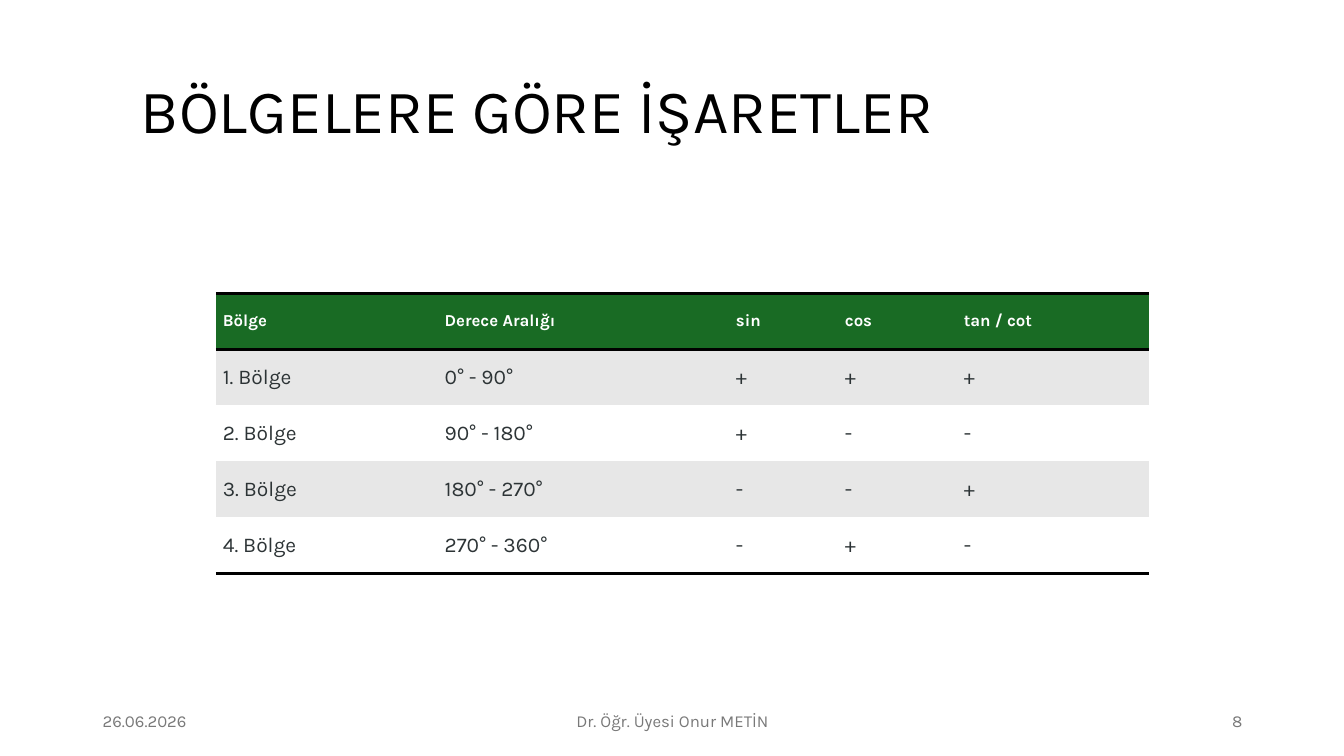
import pptx
import pptx.dml.color
import pptx.enum.text
import pptx.oxml
import pptx.oxml.ns
import pptx.util
from pptx.util import Inches

COLORS = {
    "title": "000000",
    "footer": "797979",
    "header": "196B24",
    "header_text": "FFFFFF",
    "body_text": "2D3436",
    "band": "E7E7E7",
    "plain": "FFFFFF",
    "rule": "000000",
}
FONT = "Karla"
NO_STYLE_NO_GRID = "{2D5ABB26-0587-4C30-8999-92F81FD0307C}"
ALIGN = pptx.enum.text.PP_ALIGN
MIDDLE = pptx.enum.text.MSO_ANCHOR.MIDDLE

SIGN_ROWS = [
    ["Bölge", "Derece Aralığı", "sin", "cos", "tan / cot"],
    ["1. Bölge", "0° - 90°", "+", "+", "+"],
    ["2. Bölge", "90° - 180°", "+", "-", "-"],
    ["3. Bölge", "180° - 270°", "-", "-", "+"],
    ["4. Bölge", "270° - 360°", "-", "+", "-"],
]
COLUMN_WIDTHS = [2.2, 2.89, 1.08, 1.18, 1.91]


def rgb(name):
    return pptx.dml.color.RGBColor.from_string(COLORS[name])


def write_text(frame, text, size, color, bold=False, align=ALIGN.LEFT, line_spacing=None):
    paragraph = frame.paragraphs[0]
    paragraph.alignment = align
    paragraph.line_spacing = line_spacing
    run = paragraph.add_run()
    run.text = text
    run.font.name = FONT
    run.font.size = pptx.util.Pt(size)
    run.font.bold = bold
    run.font.color.rgb = rgb(color)


def add_text_box(slide, box, text, **text_format):
    shape = slide.shapes.add_textbox(*(Inches(length) for length in box))
    frame = shape.text_frame
    frame.word_wrap = True
    frame.vertical_anchor = MIDDLE
    write_text(frame, text, **text_format)


def add_rule(cell, side):
    """Draw a 2 pt line on one side of a cell: lnT for top, lnB for bottom."""
    line = pptx.oxml.parse_xml(
        f'<a:{side} {pptx.oxml.ns.nsdecls("a")} w="{pptx.util.Pt(2)}">'
        f'<a:solidFill><a:srgbClr val="{COLORS["rule"]}"/></a:solidFill></a:{side}>'
    )
    cell._tc.get_or_add_tcPr().append(line)


def fill_cell(cell, text, row_index):
    is_header = row_index == 0
    cell.margin_left = cell.margin_right = Inches(0.07)
    cell.margin_top = cell.margin_bottom = Inches(0.03)
    cell.vertical_anchor = MIDDLE
    if is_header:
        add_rule(cell, "lnT")
    if is_header or row_index == len(SIGN_ROWS) - 1:
        add_rule(cell, "lnB")
    cell.fill.solid()
    if is_header:
        cell.fill.fore_color.rgb = rgb("header")
        write_text(cell.text_frame, text, size=12, color="header_text", bold=True)
    else:
        cell.fill.fore_color.rgb = rgb("band" if row_index % 2 else "plain")
        write_text(cell.text_frame, text, size=15, color="body_text")


def add_sign_table(slide, left, top, height):
    shape = slide.shapes.add_table(
        len(SIGN_ROWS), len(COLUMN_WIDTHS),
        Inches(left), Inches(top), Inches(sum(COLUMN_WIDTHS)), Inches(height),
    )
    table = shape.table
    table._tbl.tblPr.find(pptx.oxml.ns.qn("a:tableStyleId")).text = NO_STYLE_NO_GRID
    for column, width in zip(table.columns, COLUMN_WIDTHS):
        column.width = Inches(width)
    for row_index, texts in enumerate(SIGN_ROWS):
        for column_index, text in enumerate(texts):
            fill_cell(table.cell(row_index, column_index), text, row_index)


def add_footer(slide, left, top, width, height):
    side_width, center_width = 3, 4.5
    parts = [
        (left, side_width, "26.06.2026", ALIGN.LEFT),
        (left + (width - center_width) / 2, center_width, "Dr. Öğr. Üyesi Onur METİN", ALIGN.CENTER),
        (left + width - side_width, side_width, "8", ALIGN.RIGHT),
    ]
    for part_left, part_width, text, align in parts:
        add_text_box(slide, (part_left, top, part_width, height), text,
                     size=12, color="footer", align=align)


def main():
    presentation = pptx.Presentation()
    presentation.slide_width = Inches(13.33)
    presentation.slide_height = Inches(7.5)
    slide = presentation.slides.add_slide(presentation.slide_layouts[6])
    add_text_box(slide, (1.3, 0.4, 11.12, 1.45), "BÖLGELERE GÖRE İŞARETLER",
                 size=44, color="title", line_spacing=0.9)
    add_footer(slide, 0.92, 6.95, 11.5, 0.4)
    add_sign_table(slide, 2.14, 2.91, 2.78)
    presentation.save("out.pptx")


if __name__ == "__main__":
    main()
